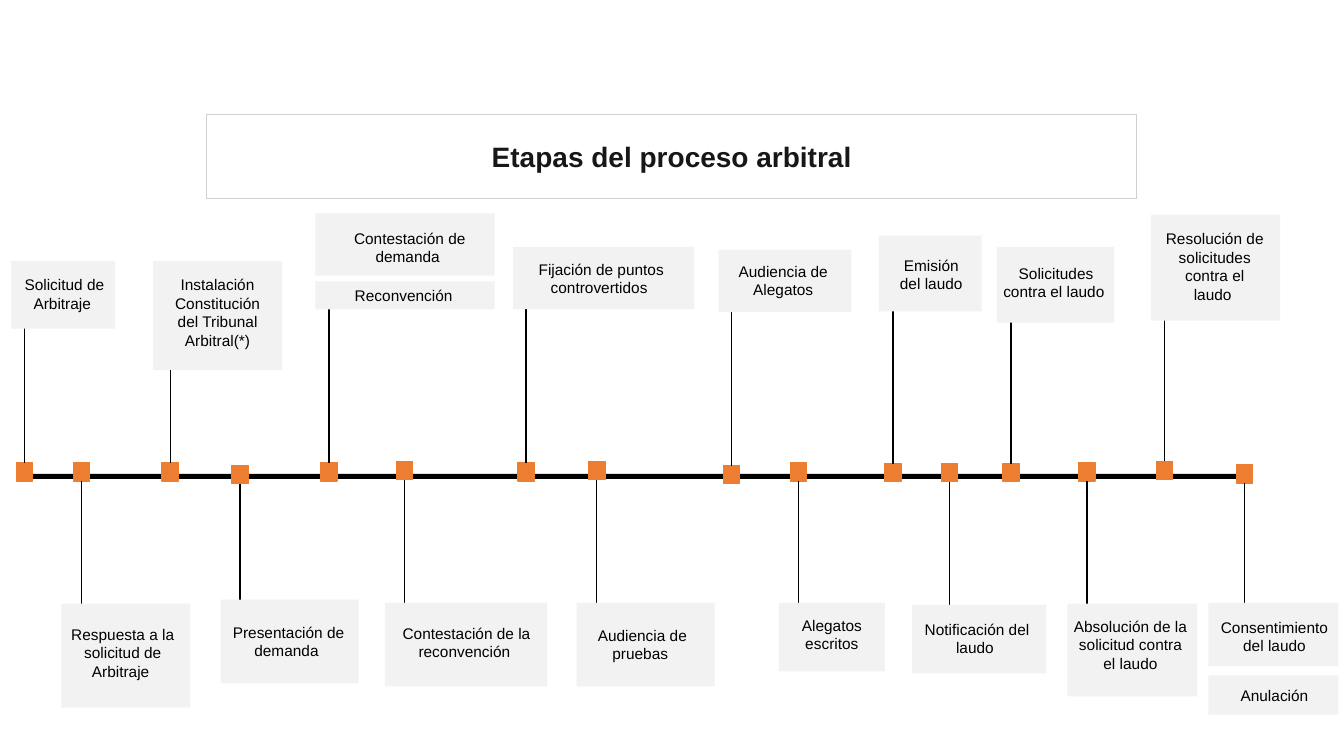
import pptx
import pptx.util
import pptx.dml.color
import pptx.enum.shapes
import pptx.enum.text
import pptx.oxml.ns
from lxml import etree
from pptx.util import Cm

RECT = pptx.enum.shapes.MSO_SHAPE.RECTANGLE
STRAIGHT = pptx.enum.shapes.MSO_CONNECTOR.STRAIGHT
TOP, BOTTOM = 0, 2
MARKER_W, MARKER_H = 0.41, 0.46
STEM = 4.2

# marker centre, marker top, then (card box, label left, top and width, label rows, text)
STAGES = [
    (0.62, 6.28, [((0.28, 1.2, 2.62, 1.7), (0, 1.43, 3.25), 2, "Solicitud de Arbitraje ")]),
    (2.06, 6.28, [((1.55, 9.83, 3.25, 2.62), (1.47, 10.24, 3.25), 4,
                   "Respuesta a la solicitud de Arbitraje ")]),
    (4.29, 6.28, [((3.86, 1.2, 3.25, 2.74), (3.86, 1.43, 3.25), 5,
                   "Instalación\nConstitución del Tribunal Arbitral(*)")]),
    (6.05, 6.35, [((5.56, 9.73, 3.48, 2.11), (5.41, 10.19, 3.73), 2,
                   "Presentación de demanda ")]),
    (8.29, 6.28, [((7.95, 0, 4.52, 1.57), (7.98, 0.26, 4.7), 2, "Contestación de demanda "),
                  ((7.95, 1.71, 4.52, 0.71), (8.41, 1.71, 3.53), 1, "Reconvención")]),
    (10.2, 6.25, [((9.7, 9.81, 4.09, 2.11), (9.73, 10.22, 4.06), 2,
                   "Contestación de la reconvención ")]),
    (13.26, 6.28, [((12.93, 0.84, 4.57, 1.57), (12.93, 1.05, 4.45), 2,
                    "Fijación de puntos controvertidos ")]),
    (15.04, 6.25, [((14.53, 9.81, 3.48, 2.11), (14.35, 10.27, 3.68), 2,
                    "Audiencia de pruebas ")]),
    (18.44, 6.35, [((18.11, 0.92, 3.35, 1.57), (17.86, 1.1, 3.76), 2,
                    "Audiencia de Alegatos")]),
    (20.12, 6.28, [((19.63, 9.81, 2.67, 1.73), (19.63, 10.01, 2.67), 2, "Alegatos escritos")]),
    (22.5, 6.3, [((22.15, 0.56, 2.59, 1.91), (22.3, 0.94, 2.34), 2, "Emisión del laudo")]),
    (23.93, 6.3, [((22.99, 9.86, 3.38, 1.73), (22.81, 10.11, 3.63), 2,
                   "Notificación del laudo ")]),
    (25.48, 6.3, [((25.12, 0.84, 2.95, 1.91), (24.99, 1.15, 3.25), 2,
                   "Solicitudes contra el laudo ")]),
    (27.39, 6.28, [((26.9, 9.83, 3.28, 2.34), (26.8, 10.04, 3.38), 3,
                    "Absolución de la solicitud contra el laudo")]),
    (29.35, 6.25, [((29.01, 0.03, 3.25, 2.67), (29.13, 0.28, 2.97), 4,
                    "Resolución de solicitudes contra el laudo ")]),
    (31.36, 6.33, [((30.45, 9.81, 3.28, 1.6), (30.28, 10.06, 3.68), 2,
                    "Consentimiento del laudo"),
                   ((30.45, 11.64, 3.28, 0.99), (30.28, 11.79, 3.68), 1, "Anulación")]),
]


def color(value):
    return pptx.dml.color.RGBColor.from_string(value)


def write(tf, text, size, value, bold=False):
    tf.word_wrap = True
    tf.auto_size = pptx.enum.text.MSO_AUTO_SIZE.SHAPE_TO_FIT_TEXT
    for i, line in enumerate(text.split("\n")):
        p = tf.add_paragraph() if i else tf.paragraphs[0]
        p.alignment = pptx.enum.text.PP_ALIGN.CENTER
        r = p.add_run()
        r.text = line
        r.font.name = "Arial"
        r.font.size = pptx.util.Pt(size)
        r.font.bold = bold
        r.font.color.rgb = color(value)


def add_rect(s, x, y, w, h, fill, line=None):
    sp = s.shapes.add_shape(RECT, Cm(x), Cm(y), Cm(w), Cm(h))
    sp.shadow.inherit = False
    sp.fill.solid()
    sp.fill.fore_color.rgb = color(fill)
    if line:
        sp.line.color.rgb = color(line)
        sp.line.width = pptx.util.Pt(1)
    else:
        sp.line.fill.background()
    return sp


def add_title(s, box):
    sp = s.shapes.title
    sp.left, sp.top, sp.width, sp.height = [Cm(v) for v in box]
    sp.line.color.rgb = color("D0CECE")
    sp.line.width = pptx.util.Pt(0.75)
    tf = sp.text_frame
    tf.vertical_anchor = pptx.enum.text.MSO_ANCHOR.MIDDLE
    write(tf, "Etapas del proceso arbitral", 20, "181717", True)


def add_stem(s, marker, x, y, up):
    end = y - STEM if up else y + MARKER_H + STEM
    stem = s.shapes.add_connector(STRAIGHT, Cm(x), Cm(y), Cm(x), Cm(end))
    stem.begin_connect(marker, TOP if up else BOTTOM)
    stem.end_x = stem.begin_x
    stem.line.color.rgb = color("000000")
    stem.line.width = pptx.util.Pt(1)
    etree.SubElement(stem._element.spPr, pptx.oxml.ns.qn("a:effectLst"))


def add_card(s, left, top, card, label, rows, text):
    x, y, w, h = card
    add_rect(s, left + x, top + y, w, h, "F2F2F2")
    x, y, w = label
    sp = s.shapes.add_textbox(Cm(left + x), Cm(top + y), Cm(w), Cm(0.26 + 0.47 * rows))
    write(sp.text_frame, text, 11, "000000")


def add_timeline(s, left, top):
    add_rect(s, left + 0.43, top + 6.56, 30.81, 0.13, "000000")
    for i, (x, y, cards) in enumerate(STAGES):
        marker = add_rect(s, left + x - MARKER_W / 2, top + y, MARKER_W, MARKER_H,
                          "ED7D31", "ED7D31")
        add_stem(s, marker, left + x, top + y, i % 2 == 0)
        for card in cards:
            add_card(s, left, top, *card)


def main():
    prs = pptx.Presentation()
    prs.slide_width, prs.slide_height = Cm(33.87), Cm(19.05)
    s = prs.slides.add_slide(prs.slide_layouts[5])
    add_title(s, (5.21, 3.38, 23.44, 1.12))
    add_timeline(s, 0, 5.38)
    prs.save("out.pptx")


if __name__ == "__main__":
    main()
